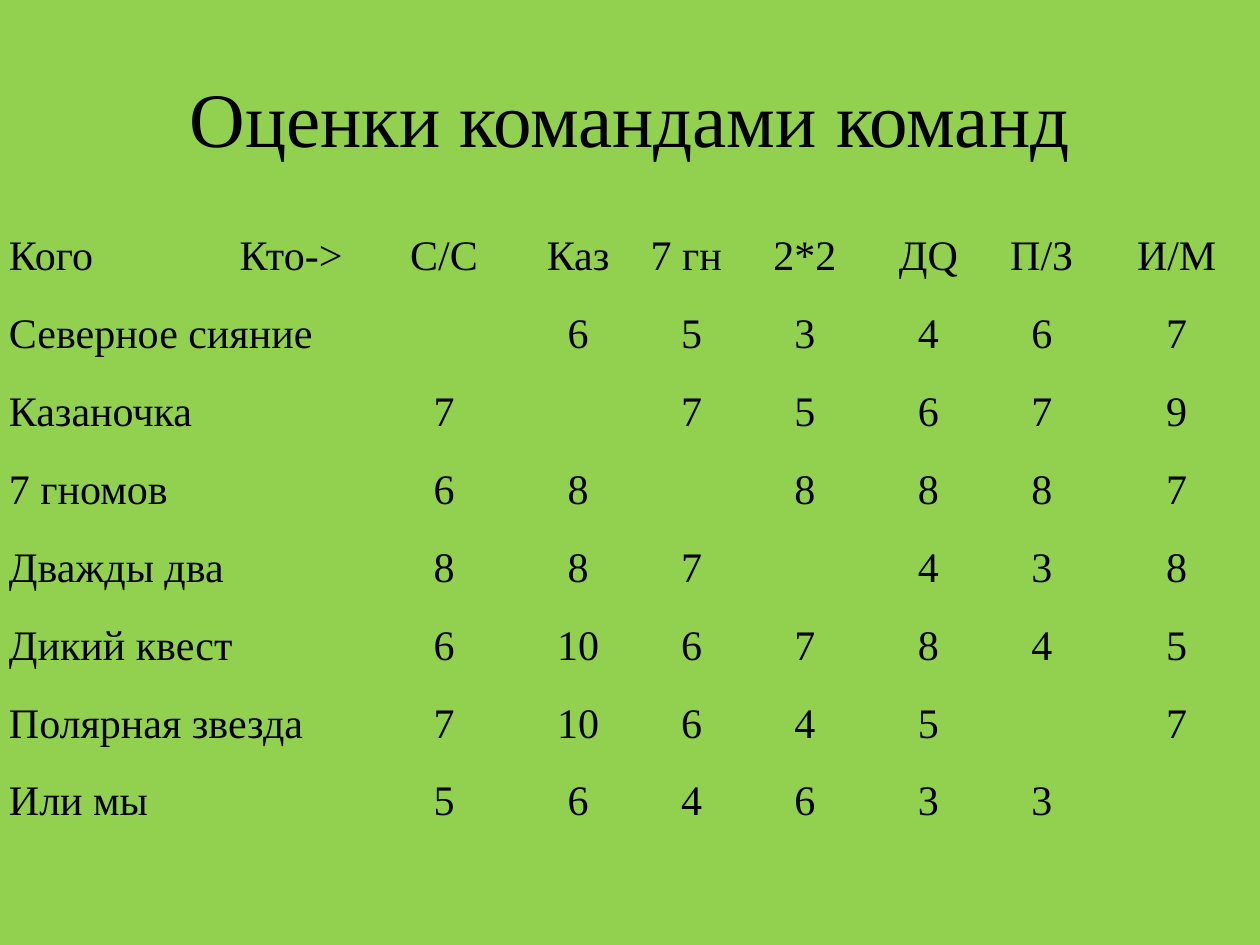
"""Builds the slide with the marks that the teams gave each other."""
import dataclasses

import pptx
import pptx.dml.color
import pptx.enum.text
import pptx.oxml
import pptx.oxml.ns
import pptx.util

Cm = pptx.util.Cm
Align = pptx.enum.text.PP_ALIGN
Anchor = pptx.enum.text.MSO_ANCHOR


@dataclasses.dataclass(frozen=True)
class Theme:
    background: str = "92D050"
    ink: str = "000000"
    font: str = "Times New Roman"
    title_size: int = 44
    table_size: int = 24
    plain_table_style: str = "{2D5ABB26-0587-4C30-8999-92F81FD0307C}"


THEME = Theme()
HEADER = ["Кого\tКто->", "С/С", "Каз", "7 гн ", "2*2", "ДQ", "П/З", "И/М"]
MARKS = [
    ["Северное сияние", "", "6", "5", "3", "4", "6", "7"],
    ["Казаночка", "7", "", "7", "5", "6", "7", "9"],
    ["7 гномов", "6", "8", "", "8", "8", "8", "7"],
    ["Дважды два", "8", "8", "7", "", "4", "3", "8"],
    ["Дикий квест", "6", "10", "6", "7", "8", "4", "5"],
    ["Полярная звезда", "7", "10", "6", "4", "5", "", "7"],
    ["Или мы", "5", "6", "4", "6", "3", "3", ""],
]
COLUMN_WIDTHS = [7.49, 2.92, 2.49, 2.08, 2.49, 2.49, 2.08, 3.36]
HEADER_HEIGHT = 3.66
MARK_HEIGHT = 1.57


def write_text(frame, text, size, align=Align.LEFT, spacing=None, tab=None):
    """Write one formatted paragraph into a text frame."""
    paragraph = frame.paragraphs[0]
    paragraph.alignment = align
    if spacing:
        paragraph.line_spacing = spacing
    if tab:
        add_tab_stop(paragraph, tab)
    run = paragraph.add_run()
    run.text = text
    run.font.name = THEME.font
    run.font.size = pptx.util.Pt(size)
    run.font.color.rgb = pptx.dml.color.RGBColor.from_string(THEME.ink)


def add_tab_stop(paragraph, position):
    """Give a paragraph one left tab stop."""
    paragraph._p.get_or_add_pPr().append(pptx.oxml.parse_xml(
        f'<a:tabLst {pptx.oxml.ns.nsdecls("a")}>'
        f'<a:tab pos="{int(position)}" algn="l"/></a:tabLst>'))


def paint_background(slide):
    """Fill the slide background with the theme colour."""
    fill = slide.background.fill
    fill.solid()
    fill.fore_color.rgb = pptx.dml.color.RGBColor.from_string(THEME.background)


def place_title(slide, text):
    """Move the title placeholder and write its text."""
    title = slide.shapes.title
    title.left, title.top = Cm(1.27), Cm(0.76)
    title.width, title.height = Cm(22.86), Cm(3.18)
    title.text_frame.vertical_anchor = Anchor.MIDDLE
    write_text(title.text_frame, text, THEME.title_size, align=Align.CENTER)


def fill_cell(cell, text, column):
    """Format one table cell and write its text."""
    cell.fill.background()
    cell.vertical_anchor = Anchor.BOTTOM
    cell.margin_left = cell.margin_right = Cm(0.18)
    cell.margin_top = cell.margin_bottom = 0
    if text:
        write_text(cell.text_frame, text, THEME.table_size,
                   align=Align.CENTER if column else Align.LEFT, spacing=1.15,
                   tab=Cm(4.65) if "\t" in text else None)


def add_marks_table(slide, rows):
    """Add the borderless table of marks."""
    heights = [HEADER_HEIGHT] + [MARK_HEIGHT] * (len(rows) - 1)
    frame = slide.shapes.add_table(
        len(rows), len(COLUMN_WIDTHS), Cm(0), Cm(1.98),
        Cm(sum(COLUMN_WIDTHS)), Cm(sum(heights)))
    table = frame.table
    table.first_row = table.horz_banding = False
    style = next(frame._element.iter(pptx.oxml.ns.qn("a:tableStyleId")))
    style.text = THEME.plain_table_style
    for column, width in zip(table.columns, COLUMN_WIDTHS):
        column.width = Cm(width)
    for row, height, texts in zip(table.rows, heights, rows):
        row.height = Cm(height)
        for index, (cell, text) in enumerate(zip(row.cells, texts)):
            fill_cell(cell, text, index)


def main():
    """Build and save the presentation."""
    deck = pptx.Presentation()
    deck.slide_width, deck.slide_height = Cm(25.4), Cm(19.05)
    slide = deck.slides.add_slide(deck.slide_layouts.get_by_name("Title Only"))
    paint_background(slide)
    place_title(slide, "Оценки командами команд")
    add_marks_table(slide, [HEADER] + MARKS)
    deck.save("out.pptx")


if __name__ == "__main__":
    main()
